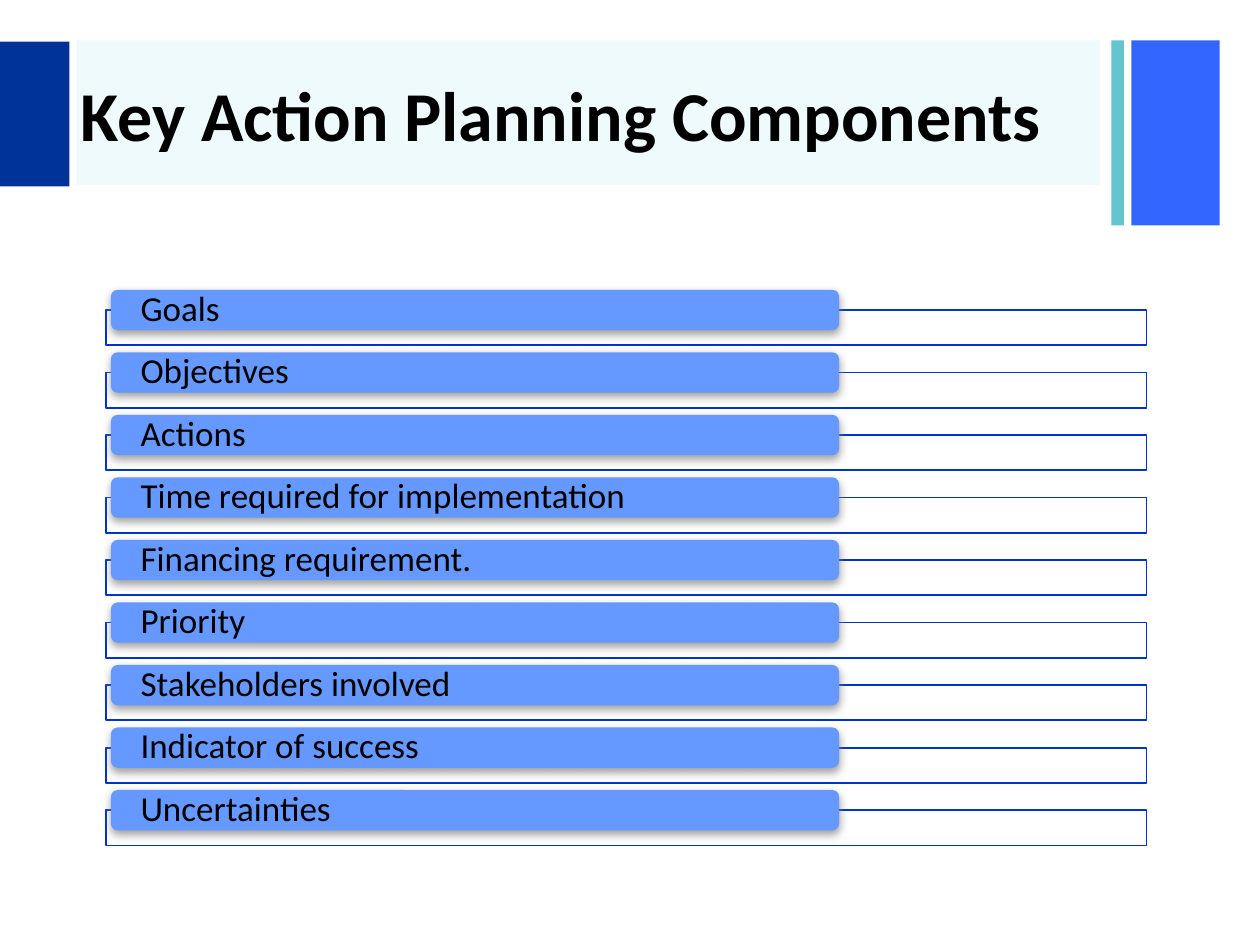
from lxml import etree
from pptx import Presentation
from pptx.dml.color import RGBColor
from pptx.enum import shapes, text
from pptx.oxml import parse_xml
from pptx.oxml.ns import nsdecls, qn
from pptx.util import Inches, Pt

# Content
TITLE = "Key Action Planning Components"
COMPONENTS = [
    "Goals",
    "Objectives",
    "Actions",
    "Time required for implementation",
    "Financing requirement.",
    "Priority",
    "Stakeholders involved",
    "Indicator of success",
    "Uncertainties",
]

FONT = "Calibri"
BLACK = RGBColor(0x00, 0x00, 0x00)
WHITE = RGBColor(0xFF, 0xFF, 0xFF)
NAVY = RGBColor(0x00, 0x33, 0x99)
BLUE = RGBColor(0x33, 0x66, 0xFF)
TEAL = RGBColor(0x65, 0xC4, 0xD2)
AQUA = RGBColor(0x14, 0xC5, 0xD0)
OUTLINE = RGBColor(0x00, 0x33, 0xCC)
PILL = RGBColor(0x66, 0x99, 0xFF)

# Header blocks: left, top, width, height, colour, opacity in percent
HEADER = [
    (8.98, 0.32, 0.7, 1.47, BLUE, 100),
    (8.82, 0.32, 0.1, 1.47, TEAL, 100),
    (0.61, 0.32, 8.12, 1.15, AQUA, 7),
    (0, 0.33, 0.55, 1.15, NAVY, 100),
]

# List geometry in inches
FIRST_TOP, LAST_TOP = 2.3, 6.27
STEP = (LAST_TOP - FIRST_TOP) / (len(COMPONENTS) - 1)
FRAME_DROP = 0.16


def add_block(page, kind, left, top, width, height, color, opacity=100):
    block = page.shapes.add_shape(
        kind, Inches(left), Inches(top), Inches(width), Inches(height))
    block.shadow.inherit = False
    block.fill.solid()
    block.fill.fore_color.rgb = color
    block.line.fill.background()
    if opacity < 100:
        color_node = block.element.spPr.find(qn("a:solidFill"))[0]
        etree.SubElement(color_node, qn("a:alpha"), val=str(opacity * 1000))
    return block


def add_soft_shadow(block):
    effects = block.element.spPr.find(qn("a:effectLst"))
    effects.append(parse_xml(
        f'<a:outerShdw {nsdecls("a")} blurRad="{Pt(5)}" dist="{Pt(2)}" '
        'dir="5400000" rotWithShape="0"><a:srgbClr val="808080">'
        '<a:alpha val="75000"/></a:srgbClr></a:outerShdw>'))


def write(frame, words, size, bold=False):
    frame.text = words
    frame.vertical_anchor = text.MSO_ANCHOR.MIDDLE
    frame.word_wrap = True
    para = frame.paragraphs[0]
    para.alignment = text.PP_ALIGN.LEFT
    span = para.runs[0]
    span.font.name = FONT
    span.font.size = Pt(size)
    span.font.bold = bold
    span.font.color.rgb = BLACK
    return para


def main():
    deck = Presentation()
    deck.slide_width, deck.slide_height = Inches(10), Inches(7.5)
    page = deck.slides.add_slide(deck.slide_layouts[5])
    rect = shapes.MSO_SHAPE.RECTANGLE

    # Header blocks, with the title in front of them
    for block in HEADER:
        add_block(page, rect, *block)
    title = page.shapes.title
    title.left, title.top = Inches(0.54), Inches(0.34)
    title.width, title.height = Inches(8.27), Inches(1.12)
    write(title.text_frame, TITLE, 40, bold=True)
    title.text_frame.auto_size = text.MSO_AUTO_SIZE.NONE
    title.element.getparent().append(title.element)

    # Outlined frame and labelled pill for each component
    for index, component in enumerate(COMPONENTS):
        top = FIRST_TOP + index * STEP
        frame = add_block(page, rect, 0.84, top + FRAME_DROP, 8.26, 0.28,
                          WHITE, 90)
        frame.line.color.rgb = OUTLINE
        frame.line.width = Pt(1)

        pill = add_block(page, shapes.MSO_SHAPE.ROUNDED_RECTANGLE,
                         0.88, top, 5.78, 0.32, PILL)
        add_soft_shadow(pill)
        label = pill.text_frame
        label.margin_left = label.margin_right = Inches(0.22)
        label.margin_top = label.margin_bottom = 0
        write(label, component, 20).line_spacing = 0.9

    deck.save("out.pptx")


if __name__ == "__main__":
    main()
